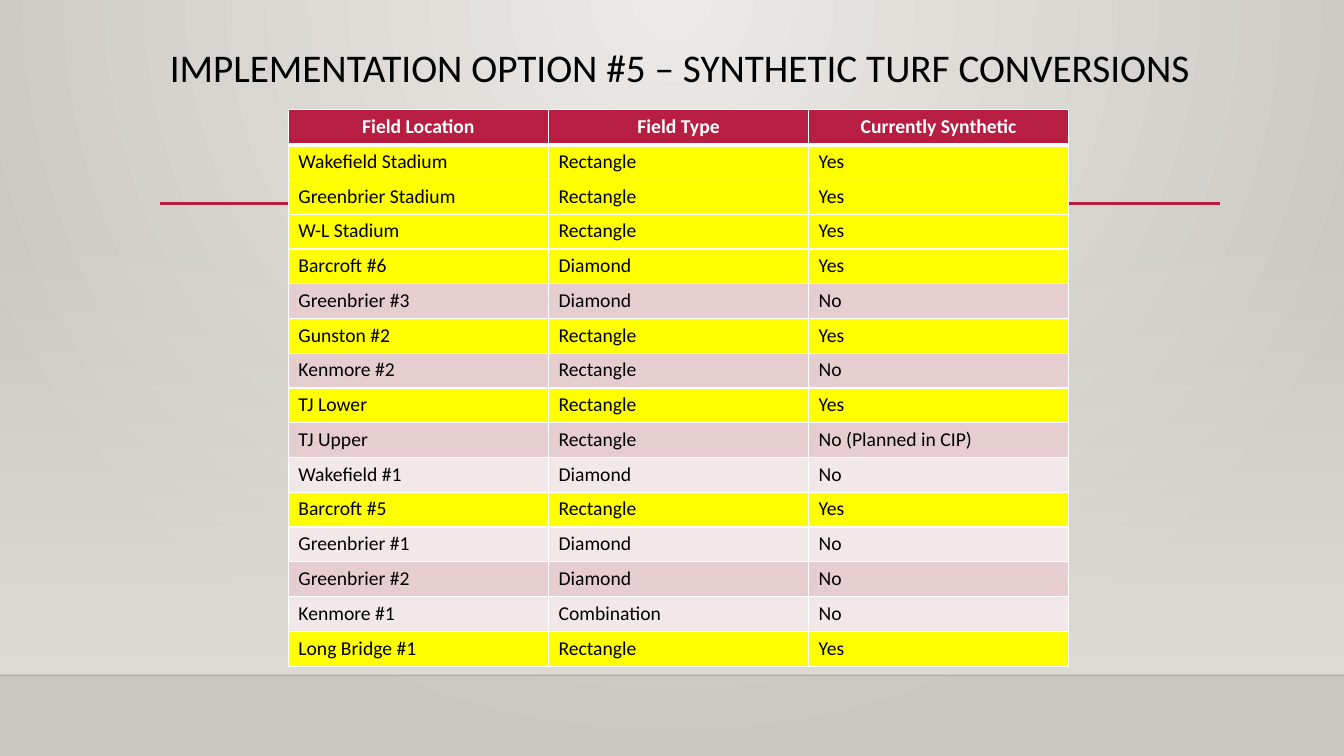
from lxml import etree
from pptx import Presentation
from pptx.dml.color import RGBColor
from pptx.enum.shapes import MSO_CONNECTOR, MSO_SHAPE
from pptx.enum.text import MSO_ANCHOR, PP_ALIGN
from pptx.oxml.ns import qn
from pptx.util import Inches, Pt

LINE = MSO_CONNECTOR.STRAIGHT
RECTANGLE = MSO_SHAPE.RECTANGLE
TOP = MSO_ANCHOR.TOP
LEFT, CENTER = PP_ALIGN.LEFT, PP_ALIGN.CENTER

# Content
TITLE = "IMPLEMENTATION OPTION #5 – SYNTHETIC TURF CONVERSIONS"
HEADERS = ("Field Location", "Field Type", "Currently Synthetic")
FIELDS = [
    ("Wakefield Stadium", "Rectangle", "Yes"),
    ("Greenbrier Stadium", "Rectangle", "Yes"),
    ("W-L Stadium", "Rectangle", "Yes"),
    ("Barcroft #6", "Diamond", "Yes"),
    ("Greenbrier #3", "Diamond", "No"),
    ("Gunston #2", "Rectangle", "Yes"),
    ("Kenmore #2", "Rectangle", "No"),
    ("TJ Lower", "Rectangle", "Yes"),
    ("TJ Upper", "Rectangle", "No (Planned in CIP)"),
    ("Wakefield #1", "Diamond", "No"),
    ("Barcroft #5", "Rectangle", "Yes"),
    ("Greenbrier #1", "Diamond", "No"),
    ("Greenbrier #2", "Diamond", "No"),
    ("Kenmore #1", "Combination", "No"),
    ("Long Bridge #1", "Rectangle", "Yes"),
]
COLORS = {
    "glow": "ECEAE7", "edge": "CAC7C1", "wall": "DFDBD5", "floor": "000001",
    "accent": "B71E42", "synthetic": "FFFF00", "band_dark": "E6CDCF",
    "band_light": "F3E8E9", "white": "FFFFFF", "black": "000000",
}
FONT = "Calibri"
SLIDE_WIDTH, SLIDE_HEIGHT = 13.33, 7.5
FLOOR_TOP = 6.7
TABLE_LEFT, TABLE_TOP, TABLE_WIDTH, TABLE_HEIGHT = 2.86, 1.09, 7.74, 5.52


def rgb(name):
    return RGBColor.from_string(COLORS[name])


def set_gradient(fill, start, end):
    fill.gradient()
    for stop, name in zip(fill.gradient_stops, (start, end)):
        stop.color.rgb = rgb(name)


def set_alpha(element, percent):
    color = next(element.iter(qn("a:srgbClr")))
    etree.SubElement(color, qn("a:alpha"), val=str(percent * 1000))


def add_run(paragraph, text, size, color, bold=False):
    run = paragraph.add_run()
    run.text = text
    run.font.name = FONT
    run.font.size = Pt(size)
    run.font.bold = bold
    run.font.color.rgb = rgb(color)


def add_line(slide, left, right, y, color, width):
    line = slide.shapes.add_connector(
        LINE, Inches(left), Inches(y), Inches(right), Inches(y))
    line.line.color.rgb = rgb(color)
    line.line.width = Pt(width)
    etree.SubElement(line.element.spPr, qn("a:effectLst"))
    return line


def set_borders(cell, bottom_width):
    properties = cell._tc.get_or_add_tcPr()
    for side, width in (("L", 1), ("R", 1), ("T", 1), ("B", bottom_width)):
        border = etree.SubElement(properties, qn(f"a:ln{side}"), w=str(Pt(width)))
        solid = etree.SubElement(border, qn("a:solidFill"))
        etree.SubElement(solid, qn("a:srgbClr"), val=COLORS["white"])


def row_fill(row, values):
    if row == 0:
        return "accent"
    if values[-1] == "Yes":
        return "synthetic"
    return "band_dark" if row % 2 else "band_light"


def add_background(slide):
    set_gradient(slide.background.fill, "glow", "edge")
    gradient = next(slide.element.iter(qn("a:gradFill")))
    gradient.remove(gradient.find(qn("a:lin")))
    circle = etree.SubElement(gradient, qn("a:path"), path="circle")
    etree.SubElement(circle, qn("a:fillToRect"),
                     l="43000", t="0", r="43000", b="100000")

    # Wall fading in towards the floor
    wall = slide.shapes.add_shape(
        RECTANGLE, 0, Inches(2.21), Inches(SLIDE_WIDTH), Inches(FLOOR_TOP - 2.21))
    wall.shadow.inherit = False
    wall.line.fill.background()
    set_gradient(wall.fill, "wall", "wall")
    wall.fill.gradient_angle = 270
    set_alpha(wall.element.spPr, 0)

    # Floor edge and accent rule
    floor = add_line(slide, 0, SLIDE_WIDTH, FLOOR_TOP, "floor", 1)
    set_alpha(floor.element.spPr, 20)
    add_line(slide, 1.59, 12.1, 2.02, "accent", 2.5)


def add_title(slide):
    box = slide.shapes.add_textbox(
        Inches(0.49), Inches(0.43), Inches(12.5), Inches(0.66))
    frame = box.text_frame
    frame.word_wrap = True
    frame.vertical_anchor = TOP
    paragraph = frame.paragraphs[0]
    paragraph.alignment = CENTER
    paragraph.line_spacing = 0.9
    add_run(paragraph, TITLE, 28, "black")


def add_field_table(slide):
    rows = [HEADERS, *FIELDS]
    table = slide.shapes.add_table(
        len(rows), len(HEADERS), Inches(TABLE_LEFT), Inches(TABLE_TOP),
        Inches(TABLE_WIDTH), Inches(TABLE_HEIGHT)).table
    for column in table.columns:
        column.width = Inches(TABLE_WIDTH / len(HEADERS))
    for row, values in enumerate(rows):
        header = row == 0
        table.rows[row].height = Inches(TABLE_HEIGHT / len(rows))
        for column, text in enumerate(values):
            cell = table.cell(row, column)
            set_borders(cell, 3 if header else 1)
            cell.fill.solid()
            cell.fill.fore_color.rgb = rgb(row_fill(row, values))
            paragraph = cell.text_frame.paragraphs[0]
            paragraph.alignment = CENTER if header else LEFT
            add_run(paragraph, text, 14, "white" if header else "black", header)


def main():
    presentation = Presentation()
    presentation.slide_width = Inches(SLIDE_WIDTH)
    presentation.slide_height = Inches(SLIDE_HEIGHT)
    slide = presentation.slides.add_slide(presentation.slide_layouts[6])
    add_background(slide)
    add_title(slide)
    add_field_table(slide)
    presentation.save("out.pptx")


if __name__ == "__main__":
    main()
